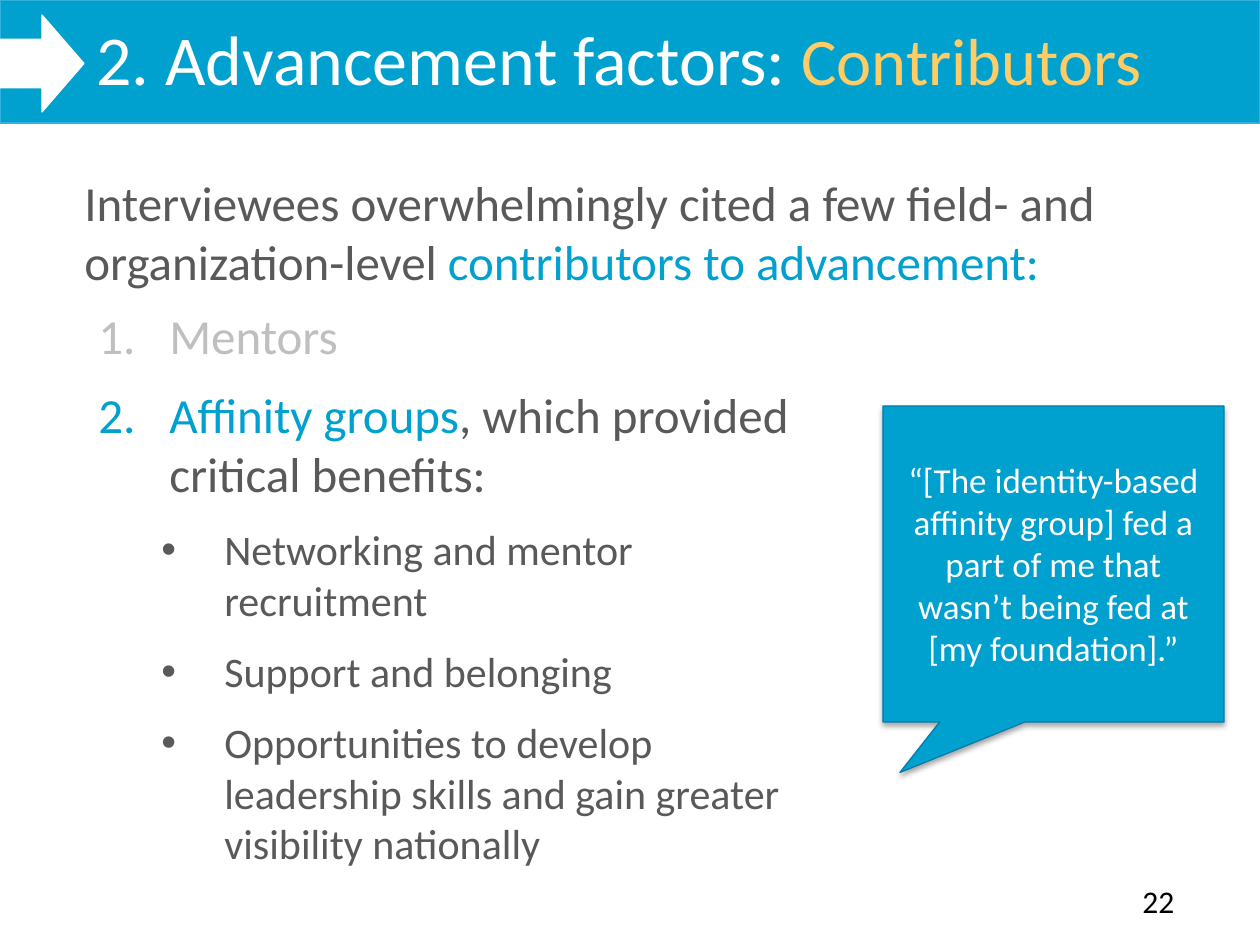
from typing import NamedTuple, Optional

from lxml.etree import SubElement
from pptx import Presentation
from pptx.dml.color import RGBColor
from pptx.enum.shapes import MSO_SHAPE as Shape
from pptx.enum.text import MSO_ANCHOR as Anchor, PP_ALIGN as Align
from pptx.oxml import parse_xml
from pptx.oxml.ns import nsdecls, qn
from pptx.util import Emu, Pt

PX_PER_INCH = 126
FONT = "Calibri"
BLUE, WHITE, GRAY, LIGHT_GRAY = "00A0CF", "FFFFFF", "595959", "BFBFBF"
GOLD, BLACK = "FFCC66", "000000"


class Box(NamedTuple):
    left: int
    top: int
    width: int
    height: int


class Run(NamedTuple):
    text: str
    size: int
    color: str


class ListStyle(NamedTuple):
    """Bullet element with its attribute, and the indents in px."""
    tag: str
    attribute: str
    value: str
    margin: int
    hanging: int


class Para(NamedTuple):
    runs: list[Run]
    style: Optional[ListStyle] = None
    space_after: int = 0
    align: Align = Align.LEFT


NUMBER = ListStyle("a:buAutoNum", "type", "arabicPeriod", 71, 71)
BULLET = ListStyle("a:buChar", "char", "•", 126, 63)


def px(n: int) -> Emu:
    return Emu(round(n * 914400 / PX_PER_INCH))


def rgb(color: str) -> RGBColor:
    return RGBColor.from_string(color)


def set_list_style(p, style: ListStyle) -> None:
    pPr = p._p.get_or_add_pPr()
    pPr.set("marL", str(px(style.margin)))
    pPr.set("indent", str(px(-style.hanging)))
    if style is BULLET:
        SubElement(pPr, qn("a:buFont")).set("typeface", "Arial")
    SubElement(pPr, qn(style.tag)).set(style.attribute, style.value)


def write(tf, paras: list[Para]) -> None:
    tf.word_wrap = True
    for i, para in enumerate(paras):
        p = tf.add_paragraph() if i else tf.paragraphs[0]
        p.alignment = para.align
        p.space_after = Pt(para.space_after)
        if para.style:
            p.level = 1 if para.style is BULLET else 0
            set_list_style(p, para.style)
        for run in para.runs:
            r = p.add_run()
            r.text = run.text
            r.font.name, r.font.size = FONT, Pt(run.size)
            r.font.color.rgb = rgb(run.color)


def add_text(s, box: Box, paras: list[Para]) -> None:
    write(s.shapes.add_textbox(*map(px, box)).text_frame, paras)


def add_filled(s, kind: Shape, box: Box, fill: str, line: str):
    sp = s.shapes.add_shape(kind, *map(px, box))
    sp.shadow.inherit = False
    sp.fill.solid()
    sp.fill.fore_color.rgb = rgb(fill)
    sp.line.color.rgb = rgb(line)
    sp.line.width = Pt(0.75)
    return sp


def add_drop_shadow(sp) -> None:
    effects = sp._element.spPr.find(qn("a:effectLst"))
    effects.append(parse_xml(
        f'<a:outerShdw {nsdecls("a")} blurRad="{Pt(3.1)}" dist="{Pt(1.8)}" '
        'dir="5400000" rotWithShape="0"><a:srgbClr val="000000">'
        '<a:alpha val="35000"/></a:srgbClr></a:outerShdw>'))


def add_quote(s, box: Box, quote: str) -> None:
    sp = add_filled(s, Shape.RECTANGULAR_CALLOUT, box, BLUE, "007CAE")
    sp.adjustments[0], sp.adjustments[1] = -0.45, 0.66
    add_drop_shadow(sp)
    sp.text_frame.vertical_anchor = Anchor.MIDDLE
    write(sp.text_frame, [Para([Run(quote, 20, WHITE)], align=Align.CENTER)])


def main() -> None:
    prs = Presentation()
    prs.slide_width, prs.slide_height = px(1260), px(945)
    s = prs.slides.add_slide(prs.slide_layouts[6])

    add_filled(s, Shape.RECTANGLE, Box(0, 0, 1260, 123), BLUE, "32B2DD")
    add_filled(s, Shape.RIGHT_ARROW, Box(0, 15, 84, 97), WHITE, WHITE)
    add_text(s, Box(84, 9, 1176, 157), [
        Para([Run("2. Advancement factors: ", 40, WHITE),
              Run("Contributors", 38, GOLD)])])
    add_text(s, Box(1130, 876, 67, 50), [Para([Run("22", 18, BLACK)])])
    add_text(s, Box(72, 166, 1188, 131), [
        Para([Run("Interviewees overwhelmingly cited a few field- and "
                  "organization-level ", 28, GRAY),
              Run("contributors to advancement:", 28, BLUE)], space_after=12)])
    add_quote(s, Box(883, 406, 341, 316),
              "“[The identity-based affinity group] fed a part of me that "
              "wasn’t being fed at [my foundation].”")

    benefits = [
        "Networking and mentor recruitment",
        "Support and belonging",
        "Opportunities to develop leadership skills and gain greater "
        "visibility nationally",
    ]
    add_text(s, Box(86, 299, 743, 581), [
        Para([Run("Mentors", 28, LIGHT_GRAY)], NUMBER, 12),
        Para([Run("Affinity groups", 28, BLUE),
              Run(", which provided critical benefits:", 28, GRAY)], NUMBER, 12),
        *(Para([Run(text, 24, GRAY)], BULLET, 12) for text in benefits)])

    prs.save("out.pptx")


if __name__ == "__main__":
    main()
